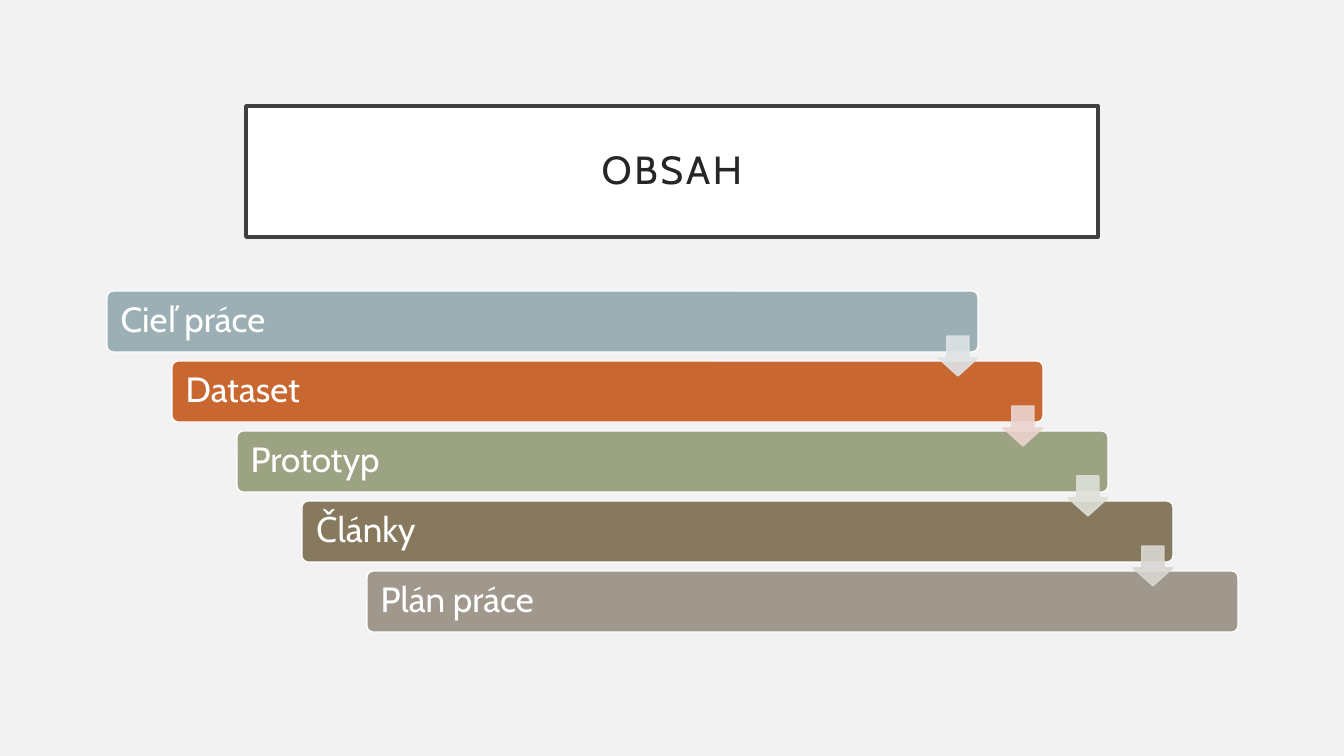
from lxml import etree
from pptx import Presentation
from pptx.dml.color import RGBColor
from pptx.enum.shapes import MSO_SHAPE
from pptx.enum.text import MSO_ANCHOR, PP_ALIGN
from pptx.oxml.ns import qn
from pptx.util import Emu, Pt

RECT, ROUNDED, DOWN_ARROW = MSO_SHAPE.RECTANGLE, MSO_SHAPE.ROUNDED_RECTANGLE, MSO_SHAPE.DOWN_ARROW
LEFT, CENTER, MIDDLE = PP_ALIGN.LEFT, PP_ALIGN.CENTER, MSO_ANCHOR.MIDDLE

# Content: topic, bar colour, colour of the arrow to the next topic
TITLE = "OBSAH"
TOPICS = [
    ("Cieľ práce", "9BAFB5", "DEE3E5"),
    ("Dataset", "C96731", "EBD3CE"),
    ("Prototyp", "9CA383", "DEE0D9"),
    ("Články", "87795D", "D9D7D2"),
    ("Plán práce", "A0988C", None),
]


class Theme:
    font = "Cabin"
    background, white = "F2F2F2", "FFFFFF"
    title_line, title_text = "404040", "262626"
    title_size, topic_size = 28, 25
    title_spacing = 200  # hundredths of a point
    arrow_alpha = 90000  # thousandths of a percent


# Layout in px
EMU_PER_PX = 914400 / 100.8
SLIDE_W, SLIDE_H = 1344, 756
TITLE_BOX = (246, 106, 852, 131)
TITLE_INSET, TOPIC_INSET = 20, 12
BAR_X, BAR_Y, BAR_W, BAR_H = 107, 291, 871, 61
STEP_X, STEP_Y = 65, 70
ARROW_SIZE, ARROW_DROP = 40, 45


def px(value):
    return Emu(round(value * EMU_PER_PX))


def rgb(value):
    return RGBColor.from_string(value)


def add_box(slide, kind, box, fill, line, line_width):
    shape = slide.shapes.add_shape(kind, *map(px, box))
    shape.shadow.inherit = False
    shape.fill.solid()
    shape.fill.fore_color.rgb = rgb(fill)
    shape.line.color.rgb = rgb(line)
    shape.line.width = Pt(line_width)
    return shape


def write(shape, text, size, color, align, inset):
    frame = shape.text_frame
    frame.word_wrap = True
    frame.vertical_anchor = MIDDLE
    frame.margin_left = frame.margin_right = px(inset)
    frame.margin_top = frame.margin_bottom = px(10)
    paragraph = frame.paragraphs[0]
    paragraph.text = text
    paragraph.alignment = align
    paragraph.line_spacing = 0.9
    paragraph.font.name = Theme.font
    paragraph.font.size = Pt(size)
    paragraph.font.color.rgb = rgb(color)
    return paragraph


def main():
    deck = Presentation()
    deck.slide_width, deck.slide_height = px(SLIDE_W), px(SLIDE_H)
    slide = deck.slides.add_slide(deck.slide_layouts[6])
    slide.background.fill.solid()
    slide.background.fill.fore_color.rgb = rgb(Theme.background)

    # Framed title
    title = add_box(slide, RECT, TITLE_BOX, Theme.white, Theme.title_line, 2.5)
    heading = write(title, TITLE, Theme.title_size, Theme.title_text, CENTER, TITLE_INSET)
    heading.runs[0].font._element.set("spc", str(Theme.title_spacing))

    # Staircase of topics
    for i, (topic, color, _) in enumerate(TOPICS):
        box = (BAR_X + i * STEP_X, BAR_Y + i * STEP_Y, BAR_W, BAR_H)
        bar = add_box(slide, ROUNDED, box, color, Theme.white, 1)
        bar.adjustments[0] = 0.1
        write(bar, topic, Theme.topic_size, Theme.white, LEFT, TOPIC_INSET)

    # Translucent arrows, flush with the right end of each bar
    for i, (_, _, color) in enumerate(TOPICS[:-1]):
        box = (BAR_X + BAR_W - ARROW_SIZE + i * STEP_X,
               BAR_Y + ARROW_DROP + i * STEP_Y, ARROW_SIZE, ARROW_SIZE)
        arrow = add_box(slide, DOWN_ARROW, box, color, color, 1)
        arrow.adjustments[0], arrow.adjustments[1] = 0.55, 0.45
        for paint in arrow._element.spPr.iter(qn("a:srgbClr")):
            etree.SubElement(paint, qn("a:alpha"), val=str(Theme.arrow_alpha))

    deck.save("out.pptx")


if __name__ == "__main__":
    main()
